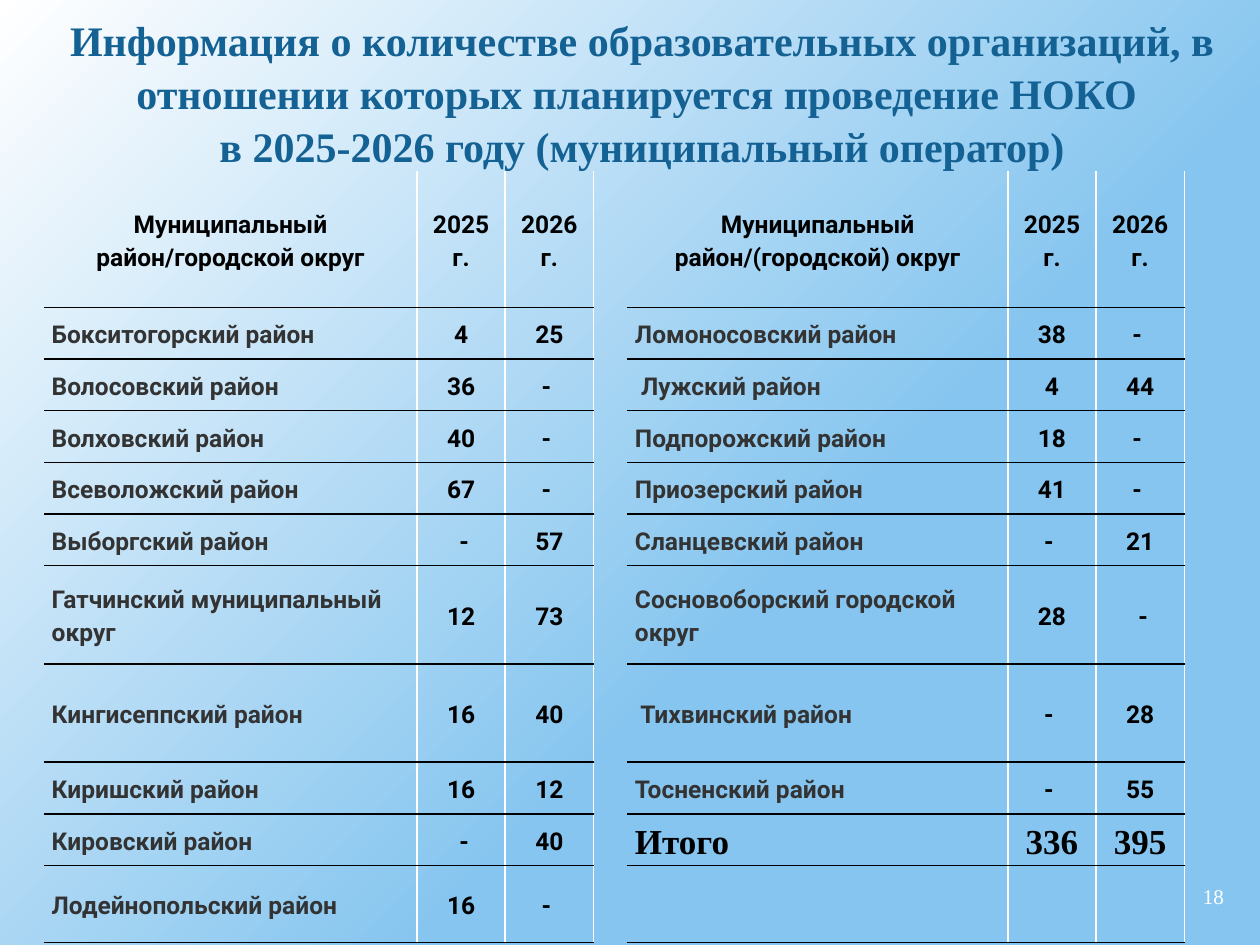
from copy import deepcopy

from lxml import etree
from pptx import Presentation
from pptx.dml.color import RGBColor
from pptx.enum import text as t
from pptx.oxml.ns import qn
from pptx.util import Inches, Pt

SERIF, SANS = "Times New Roman", "Roboto"
BLACK, WHITE, GRAY, BLUE, SKY = "000000", "FFFFFF", "333333", "146194", "86C5EF"

TITLE = ("Информация о количестве образовательных организаций, в отношении "
         "которых планируется проведение НОКО \vв 2025-2026 году (муниципальный оператор)")
PAGE = "18"
TOTAL = "Итого"
YEARS = ("2025 г.", "2026 г.")
LEFT = [
    ("Муниципальный район/городской округ", *YEARS),
    ("Бокситогорский район", "4", "25"),
    ("Волосовский район", "36", "- "),
    ("Волховский район", "40", "- "),
    ("Всеволожский район", "67", "- "),
    ("Выборгский район", " -", "57"),
    ("Гатчинский муниципальный округ", "12", "73"),
    ("Кингисеппский район", "16", "40"),
    ("Киришский район", "16", "12"),
    ("Кировский район", " -", "40"),
    ("Лодейнопольский район", "16", "- "),
]
RIGHT = [
    ("Муниципальный район/(городской) округ", *YEARS),
    ("Ломоносовский район", "38", "- "),
    (" Лужский район", "4", "44"),
    ("Подпорожский район", "18", "- "),
    ("Приозерский район", "41", "- "),
    ("Сланцевский район", "- ", "21"),
    ("Сосновоборский городской округ", "28", " -"),
    (" Тихвинский район", "- ", "28"),
    ("Тосненский район", "- ", "55"),
    (TOTAL, "336", "395"),
    ("", "", ""),
]
COLS = [2.96, 0.7, 0.7, 0.27, 3.02, 0.7, 0.7]
ROWS = [1.08] + [0.41] * 5 + [0.78] * 2 + [0.41] * 2 + [0.61]
GAP, NAMES = 3, (0, 4)


def rgb(value):
    return RGBColor.from_string(value)


def style(p, size, face, color, bold=False, align=t.PP_ALIGN.CENTER, spacing=None):
    p.alignment = align
    p.line_spacing = spacing
    for r in p.runs:
        r.font.size, r.font.name, r.font.bold = Pt(size), face, bold
        r.font.color.rgb = rgb(color)


def add_text(s, box, text, anchor, *look, **options):
    tf = s.shapes.add_textbox(*map(Inches, box)).text_frame
    tf.word_wrap = True
    tf.vertical_anchor = anchor
    tf.text = text
    style(tf.paragraphs[0], *look, **options)


def set_borders(cell, colors):
    """Set left, right, top and bottom lines; None hides a side."""
    tc_pr = cell._tc.get_or_add_tcPr()
    for i, (side, color) in enumerate(zip("LRTB", colors)):
        ln = etree.Element(qn(f"a:ln{side}"), w=str(Pt(1)))
        if color:
            fill = etree.SubElement(ln, qn("a:solidFill"))
            etree.SubElement(fill, qn("a:srgbClr"), val=color)
        else:
            etree.SubElement(ln, qn("a:noFill"))
        tc_pr.insert(i, ln)


def set_background(s):
    fill = s.background.fill
    fill.gradient()
    fill.gradient_angle = 315
    for stop, pos, color in zip(fill.gradient_stops, (0, 0.62), (WHITE, SKY)):
        stop.position = pos
        stop.color.rgb = rgb(color)
    stops = s.element.find(".//" + qn("a:gsLst"))
    end = deepcopy(stops[-1])
    end.set("pos", "100000")
    stops.append(end)


def add_districts(s):
    table = s.shapes.add_table(len(ROWS), len(COLS), Inches(0.35), Inches(1.36),
                               Inches(sum(COLS)), Inches(sum(ROWS))).table
    table.first_row = table.horz_banding = False
    for column, width in zip(table.columns, COLS):
        column.width = Inches(width)
    for row, height in zip(table.rows, ROWS):
        row.height = Inches(height)

    for i, (left, right) in enumerate(zip(LEFT, RIGHT)):
        for j, text in enumerate((*left, "", *right)):
            cell = table.cell(i, j)
            cell.fill.background()
            cell.vertical_anchor = t.MSO_ANCHOR.MIDDLE
            cell.margin_left = cell.margin_right = Inches(0.06)
            cell.margin_top = cell.margin_bottom = 0
            cell.text = text

            is_name, in_gap = j in NAMES, j == GAP
            total = right[0] == TOTAL and j > GAP
            size, face = (20, SERIF) if total else (14, SANS)
            color = GRAY if is_name and i and not total else BLACK
            align = t.PP_ALIGN.LEFT if is_name and i else t.PP_ALIGN.CENTER
            style(cell.text_frame.paragraphs[0], size, face, color, True, align, 1.15)

            set_borders(cell, (None if is_name else WHITE,
                               None if in_gap else WHITE,
                               None if in_gap or i == 0 else BLACK,
                               None if in_gap else BLACK))


def main():
    prs = Presentation()
    prs.slide_width, prs.slide_height = Inches(10), Inches(7.5)
    s = prs.slides.add_slide(prs.slide_layouts[6])
    set_background(s)
    add_text(s, (9.41, 6.98, 0.44, 0.27), PAGE, t.MSO_ANCHOR.MIDDLE, 12, SERIF, WHITE)
    add_districts(s)
    add_text(s, (0.35, 0.05, 9.49, 1.31), TITLE, t.MSO_ANCHOR.TOP,
             24, SERIF, BLUE, True, spacing=1.05)
    prs.save("out.pptx")


if __name__ == "__main__":
    main()
